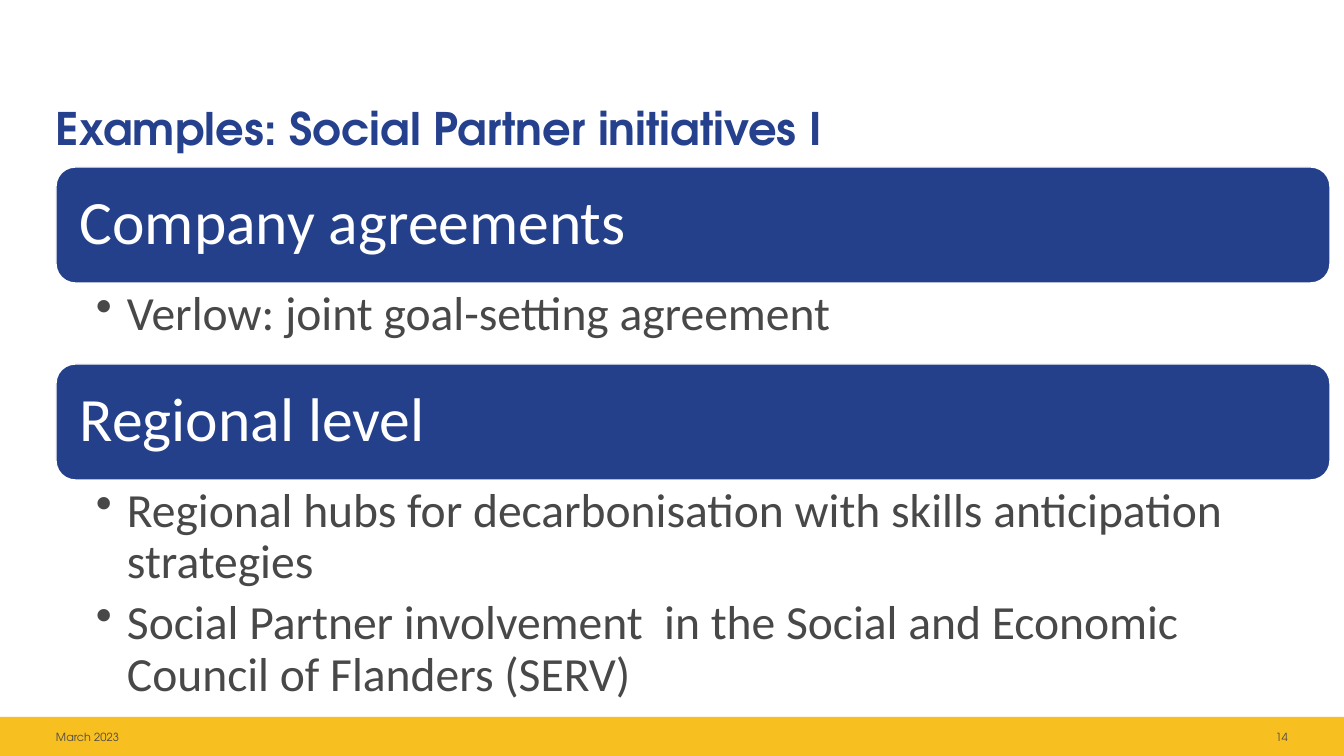
from lxml import etree
from pptx import Presentation
from pptx import util as u
from pptx.dml.color import RGBColor
from pptx.enum import shapes, text
from pptx.oxml.ns import qn

PX = 914400 / 100.8
WIDTH, HEIGHT = 1344, 756
MARGIN = 56
CARD_WIDTH, CARD_HEIGHT = 1274, 116

WHITE = RGBColor(0xFF, 0xFF, 0xFF)
YELLOW = RGBColor(0xF8, 0xBF, 0x21)
TITLE_BLUE = RGBColor(0x25, 0x40, 0x8C)
CARD_BLUE = RGBColor(0x24, 0x40, 0x8B)
FOOTER_GREY = RGBColor(0x4A, 0x49, 0x49)
BULLET_GREY = RGBColor(0x49, 0x48, 0x48)

HEADING_FONT = "TeX Gyre Adventor"
BODY_FONT = "Calibri"

# Top of card, heading, height of the list below, list items
SECTIONS = [
    (167, "Company agreements", 81, ["Verlow: joint goal-setting agreement"]),
    (364, "Regional level", 236, [
        "Regional hubs for decarbonisation with skills anticipation strategies",
        "Social Partner involvement  in the Social and Economic Council of Flanders (SERV)",
    ]),
]


def px(length):
    return u.Emu(round(length * PX))


class Slide:
    def __init__(self, deck):
        self.page = deck.slides.add_slide(deck.slide_layouts[6])

    def shape(self, kind, area, fill, line=None):
        shape = self.page.shapes.add_shape(kind, *map(px, area))
        shape.shadow.inherit = False
        shape.fill.solid()
        shape.fill.fore_color.rgb = fill
        if line is None:
            shape.line.fill.background()
        else:
            shape.line.color.rgb = line
            shape.line.width = u.Pt(1)
        return shape

    def fill_text(self, shape, lines, font, size, color, bold=False, insets=(0, 0, 0, 0),
                  anchor=text.MSO_ANCHOR.TOP, align=text.PP_ALIGN.LEFT, bullets=False):
        """Fill a shape with paragraphs; insets run left, top, right, bottom."""
        frame = shape.text_frame
        frame.word_wrap = True
        frame.vertical_anchor = anchor
        (frame.margin_left, frame.margin_top,
         frame.margin_right, frame.margin_bottom) = map(px, insets)
        frame.text = "\n".join(lines)
        for para in frame.paragraphs:
            if bullets:
                self.bullet(para)
            para.alignment = align
            para.line_spacing = 0.9
            for span in para.runs:
                span.font.name = font
                span.font.size = u.Pt(size)
                span.font.bold = bold
                span.font.color.rgb = color

    def bullet(self, para):
        properties = para._p.get_or_add_pPr()
        properties.set("marL", str(px(31)))
        properties.set("indent", str(-px(31)))
        etree.SubElement(properties, qn("a:buChar")).set("char", "•")
        para.space_after = u.Pt(7)

    def label(self, area, lines, font, size, color, **style):
        box = self.page.shapes.add_textbox(*map(px, area))
        self.fill_text(box, lines, font, size, color, **style)

    def card(self, top, heading):
        card = self.shape(shapes.MSO_SHAPE.ROUNDED_RECTANGLE,
                          (MARGIN, top, CARD_WIDTH, CARD_HEIGHT), CARD_BLUE, WHITE)
        self.fill_text(card, [heading], BODY_FONT, 44, WHITE,
                       insets=(18, 18, 18, 18), anchor=text.MSO_ANCHOR.MIDDLE)

    def footer(self, left, words, align):
        self.label((left, 726, 199, 23), [words], HEADING_FONT, 8, FOOTER_GREY,
                   anchor=text.MSO_ANCHOR.MIDDLE, align=align)


def main():
    deck = Presentation()
    deck.slide_width, deck.slide_height = px(WIDTH), px(HEIGHT)
    slide = Slide(deck)
    slide.shape(shapes.MSO_SHAPE.RECTANGLE, (0, 717, WIDTH, 39), YELLOW)
    slide.label((MARGIN, 107, 1230, 80), ["Examples: Social Partner initiatives I"],
                HEADING_FONT, 32, TITLE_BLUE, bold=True)
    slide.footer(MARGIN, "March 2023", text.PP_ALIGN.LEFT)
    slide.footer(1089, "14", text.PP_ALIGN.RIGHT)
    for top, heading, list_height, items in SECTIONS:
        slide.card(top, heading)
        slide.label((MARGIN, top + CARD_HEIGHT, CARD_WIDTH, list_height), items,
                    BODY_FONT, 34, BULLET_GREY, insets=(40, 6, 34, 6), bullets=True)
    deck.save("out.pptx")


if __name__ == "__main__":
    main()
